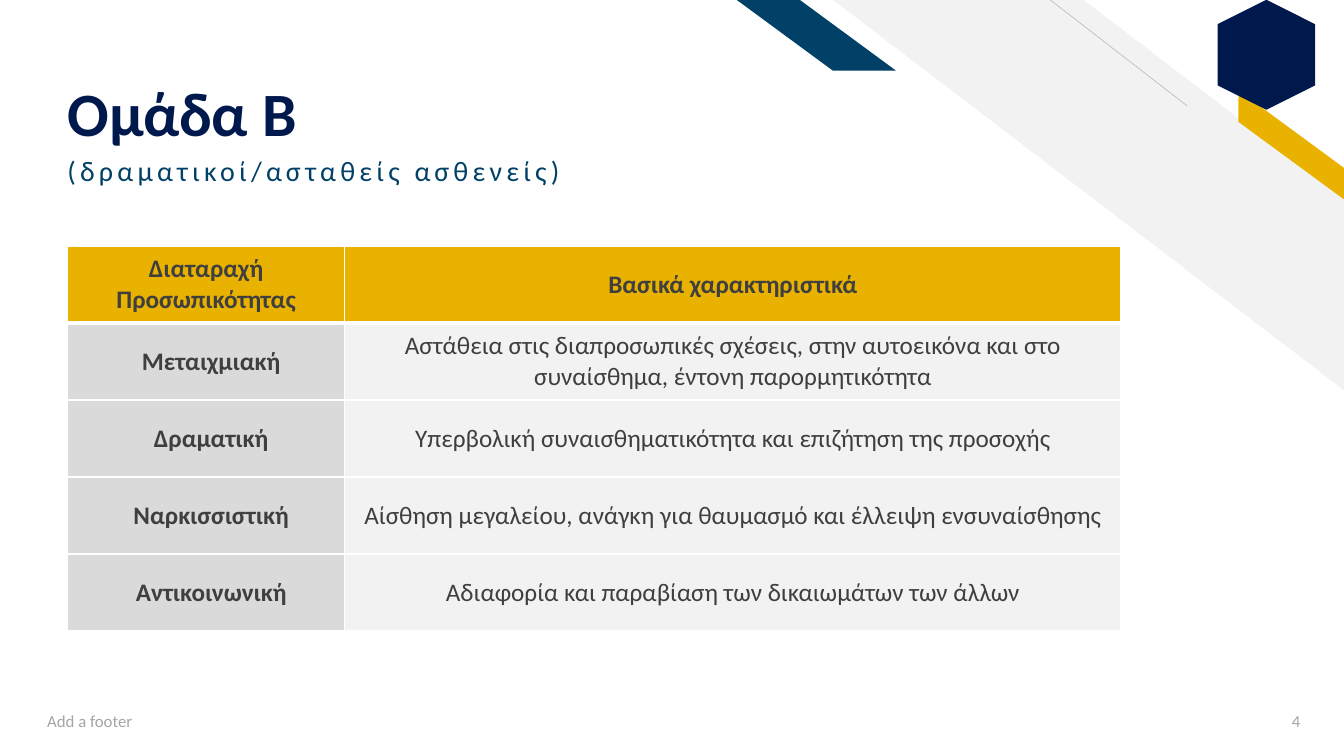
"""Build the slide about cluster B personality disorders."""
from lxml import etree
from pptx import Presentation
from pptx.dml.color import RGBColor
from pptx.enum.shapes import MSO_CONNECTOR, MSO_SHAPE
from pptx.enum.text import MSO_ANCHOR, PP_ALIGN
from pptx.oxml.ns import qn
from pptx.util import Cm, Pt

STRIPE, PARALLELOGRAM, HEXAGON = (
    MSO_SHAPE.DIAGONAL_STRIPE, MSO_SHAPE.PARALLELOGRAM, MSO_SHAPE.HEXAGON)
STRAIGHT = MSO_CONNECTOR.STRAIGHT
TOP, MIDDLE, BOTTOM = MSO_ANCHOR.TOP, MSO_ANCHOR.MIDDLE, MSO_ANCHOR.BOTTOM
LEFT, CENTER, RIGHT = PP_ALIGN.LEFT, PP_ALIGN.CENTER, PP_ALIGN.RIGHT

NAVY = RGBColor(0x00, 0x19, 0x4C)
TEAL = RGBColor(0x01, 0x40, 0x67)
GOLD = RGBColor(0xEA, 0xB2, 0x00)
PALE = RGBColor(0xF2, 0xF2, 0xF2)
SILVER = RGBColor(0xDA, 0xDA, 0xDA)
LINE_GREY = RGBColor(0xBF, 0xBF, 0xBF)
FOOTER_GREY = RGBColor(0xA5, 0xA5, 0xA5)
DARK = RGBColor(0x3F, 0x3F, 0x3F)
WHITE = RGBColor(0xFF, 0xFF, 0xFF)

FONT = "Calibri"
ROW_HEIGHT = 1.94
COLUMN_WIDTHS = (6.99, 19.56)
ROWS = (
    ("Διαταραχή Προσωπικότητας", "Βασικά χαρακτηριστικά"),
    ("Μεταιχμιακή", "Αστάθεια στις διαπροσωπικές σχέσεις, στην αυτοεικόνα "
                    "και στο συναίσθημα, έντονη παρορμητικότητα"),
    ("Δραματική", "Υπερβολική συναισθηματικότητα και επιζήτηση της προσοχής"),
    ("Ναρκισσιστική",
     "Αίσθηση μεγαλείου, ανάγκη για θαυμασμό και έλλειψη ενσυναίσθησης"),
    ("Αντικοινωνική", "Αδιαφορία και παραβίαση των δικαιωμάτων των άλλων"),
)


def add_shape(page, kind, area, color, adjustment=None, flipped=False, rotation=0):
    """Add a borderless filled preset shape."""
    shape = page.shapes.add_shape(kind, *map(Cm, area))
    shape.shadow.inherit = False
    shape.fill.solid()
    shape.fill.fore_color.rgb = color
    shape.line.fill.background()
    shape.rotation = rotation
    if adjustment is not None:
        shape.adjustments[0] = adjustment
    if flipped:
        shape.element.spPr.get_or_add_xfrm().set("flipH", "1")


def add_line(page, start, end, color, width):
    """Add a thin straight line without shadow."""
    line = page.shapes.add_connector(STRAIGHT, *map(Cm, start + end))
    line.line.color.rgb = color
    line.line.width = Pt(width)
    etree.SubElement(line.element.spPr, qn("a:effectLst"))


def write(frame, text, size, color, bold=False, align=LEFT):
    """Write one paragraph in a text frame and return it."""
    frame.word_wrap = True
    para = frame.paragraphs[0]
    para.alignment = align
    para.add_run().text = text
    para.font.name = FONT
    para.font.size = Pt(size)
    para.font.bold = bold
    para.font.color.rgb = color
    return para


def add_text(page, area, text, size, color, anchor=MIDDLE, bold=False,
             align=LEFT, line_spacing=1.0, tracking=0):
    """Add a text box with one paragraph."""
    frame = page.shapes.add_textbox(*map(Cm, area)).text_frame
    frame.vertical_anchor = anchor
    if anchor == BOTTOM:
        frame.margin_bottom = 0
    para = write(frame, text, size, color, bold, align)
    para.line_spacing = line_spacing
    if tracking:
        for span in para.runs:
            span.font._element.set("spc", str(tracking * 100))


def add_border(cell, side, width):
    """Draw a white border on one side of a cell."""
    properties = cell._tc.get_or_add_tcPr()
    border = etree.SubElement(properties, qn(f"a:ln{side}"), w=str(Pt(width)))
    fill = etree.SubElement(border, qn("a:solidFill"))
    etree.SubElement(fill, qn("a:srgbClr"), val=str(WHITE))


def fill_cell(cell, text, row, column):
    """Write and style a table cell by its row and column."""
    header, first = row == 0, column == 0
    for side in "LRTB":
        thick = (side, row) in (("B", 0), ("T", 1))
        add_border(cell, side, 3 if thick else 1)
    cell.fill.solid()
    cell.fill.fore_color.rgb = GOLD if header else SILVER if first else PALE
    cell.vertical_anchor = MIDDLE
    if first and not header:
        cell.margin_left = Cm(0.51)
    write(cell.text_frame, text, 18, DARK, header or first, CENTER)


def add_disorder_table(page):
    """Add the table of disorders and their traits."""
    table = page.shapes.add_table(
        len(ROWS), len(COLUMN_WIDTHS), Cm(1.7), Cm(6.2),
        Cm(sum(COLUMN_WIDTHS)), Cm(ROW_HEIGHT * len(ROWS))).table
    for column, width in zip(table.columns, COLUMN_WIDTHS):
        column.width = Cm(width)
    for row, texts in enumerate(ROWS):
        table.rows[row].height = Cm(ROW_HEIGHT)
        for column, text in enumerate(texts):
            fill_cell(table.cell(row, column), text, row, column)


def main():
    """Build and save the deck."""
    deck = Presentation()
    deck.slide_width, deck.slide_height = Cm(33.87), Cm(19.05)
    page = deck.slides.add_slide(deck.slide_layouts[6])

    add_shape(page, STRIPE, (21, 0, 12.87, 9.83), PALE, 0.51, flipped=True)
    add_line(page, (29.92, 2.67), (26.47, 0), LINE_GREY, 0.5)
    add_shape(page, PARALLELOGRAM, (30.66, 3.33, 3.76, 0.64), GOLD, 0.72,
              flipped=True, rotation=36.3)
    add_shape(page, PARALLELOGRAM, (18.57, 0, 4.01, 1.78), TEAL, 1.36, flipped=True)

    add_text(page, (1.45, 0.58, 23.14, 3.2), "Ομάδα Β", 44, NAVY, BOTTOM,
             bold=True, line_spacing=0.9)
    add_text(page, (1.45, 3.84, 20.47, 1.7), "(δραματικοί/ασταθείς ασθενείς)",
             20, TEAL, TOP, line_spacing=0.9, tracking=3)
    add_disorder_table(page)
    add_text(page, (0.94, 17.65, 11.43, 1.02), "Add a footer", 12, FOOTER_GREY)
    add_text(page, (30.96, 17.65, 2.06, 1.02), "4", 12, FOOTER_GREY, align=RIGHT)
    add_shape(page, HEXAGON, (30.53, 0.15, 2.77, 2.46), NAVY, rotation=270)

    deck.save("out.pptx")


if __name__ == "__main__":
    main()
